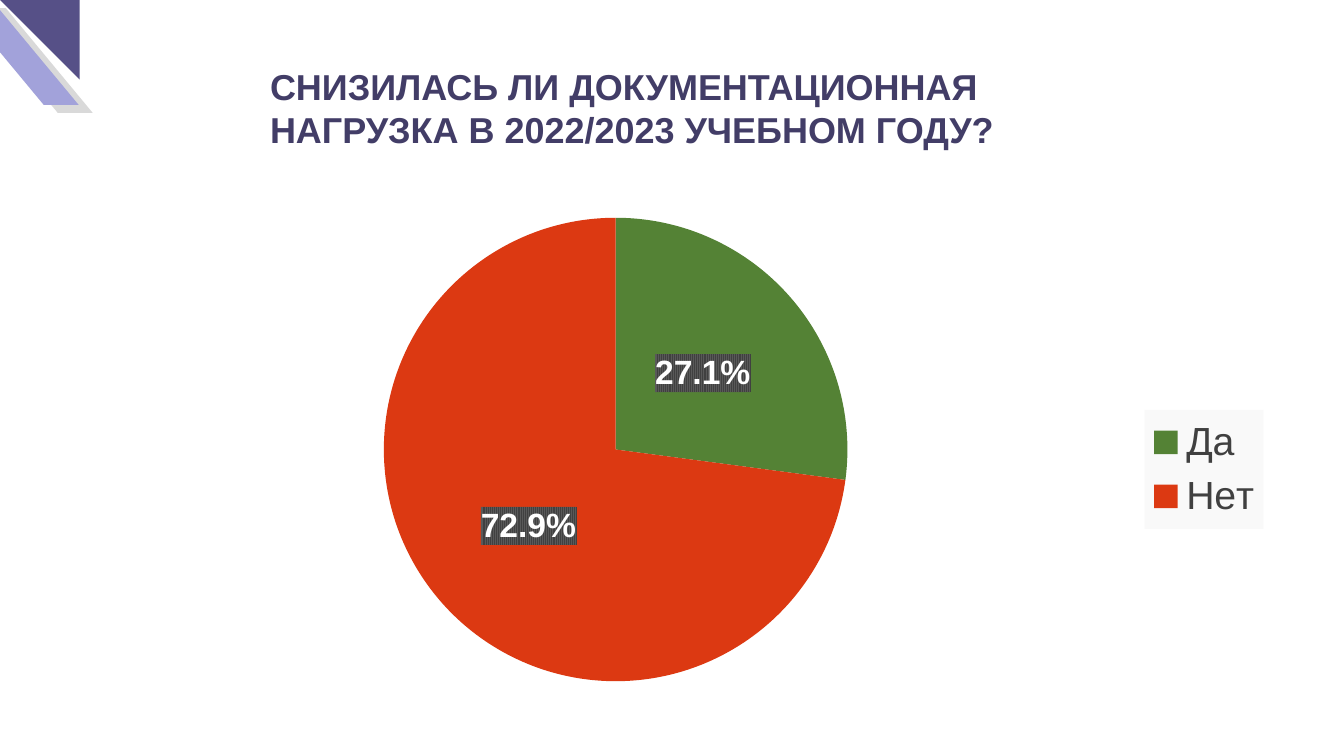
from lxml.etree import SubElement
from pptx import Presentation
from pptx.chart.data import CategoryChartData
from pptx.dml.color import RGBColor
from pptx.enum.chart import XL_CHART_TYPE, XL_LABEL_POSITION, XL_LEGEND_POSITION
from pptx.enum.shapes import MSO_SHAPE
from pptx.oxml import parse_xml
from pptx.oxml.ns import nsdecls, qn
from pptx.util import Inches, Pt

GRAY = RGBColor(0xD9, 0xD9, 0xD9)
LILAC = RGBColor(0xA2, 0xA2, 0xDA)
VIOLET = RGBColor(0x56, 0x50, 0x87)
NAVY = RGBColor(0x42, 0x3D, 0x67)
GREEN = RGBColor(0x54, 0x82, 0x35)
RED = RGBColor(0xDC, 0x39, 0x12)
DARK = RGBColor(0x40, 0x40, 0x40)
SLATE = RGBColor(0x59, 0x59, 0x59)
PALE = RGBColor(0xF9, 0xF9, 0xF9)
WHITE = RGBColor(0xFF, 0xFF, 0xFF)


class Deck:
    face = "Arial"

    def __init__(self, slide):
        self.slide = slide

    def style(self, font, size, color, bold=False):
        font.name = self.face
        font.size = Pt(size)
        font.color.rgb = color
        font.bold = bold

    def shape(self, kind, box, color, slant=None):
        shape = self.slide.shapes.add_shape(kind, *map(Inches, box))
        shape.shadow.inherit = False
        shape.fill.solid()
        shape.fill.fore_color.rgb = color
        shape.line.fill.background()
        if slant:
            shape.adjustments[0] = slant
        return shape

    def band(self, left, top, color):
        shape = self.shape(MSO_SHAPE.PARALLELOGRAM, (left, top, 1.21, 1.04), color, 0.83)
        shape._element.spPr.find(qn("a:xfrm")).set("flipH", "1")

    def title(self, box, text):
        frame = self.slide.shapes.add_textbox(*map(Inches, box)).text_frame
        frame.word_wrap = True
        line = frame.paragraphs[0]
        line.text = text
        self.style(line.font, 25.7, NAVY, True)

    def place(self, owner, index, inner, box):
        for old in owner.findall(qn("c:layout")):
            owner.remove(old)
        layout = parse_xml(f"<c:layout {nsdecls('c')}/>")
        manual = SubElement(layout, qn("c:manualLayout"))
        parts = [("layoutTarget", "inner")] if inner else []
        parts += [("xMode", "edge"), ("yMode", "edge"), *zip("xywh", box)]
        for tag, value in parts:
            SubElement(manual, qn(f"c:{tag}")).set("val", str(value))
        owner.insert(index, layout)

    def back(self, owner, fill):
        props = parse_xml(f"<c:spPr {nsdecls('c', 'a')}>{fill}</c:spPr>")
        owner.find(qn("c:txPr")).addprevious(props)

    def pie(self, box, names, values, colors):
        data = CategoryChartData()
        data.categories = names
        data.add_series("Series 1", values)
        chart = self.slide.shapes.add_chart(
            XL_CHART_TYPE.PIE, *map(Inches, box), data).chart
        chart.has_title = False
        chart.font.name = self.face
        chart.font.size = Pt(10)
        plot = chart.plots[0]
        plot.vary_by_categories = True
        for index, color in enumerate(colors):
            fill = plot.series[0].points[index].format.fill
            fill.solid()
            fill.fore_color.rgb = color
        self.place(chart._chartSpace.chart.plotArea, 0, True, (0.25, 0.03, 0.39, 0.94))
        self.labels(plot.series[0].data_labels)
        self.legend(chart)

    def labels(self, labels):
        labels.show_value = False
        labels.show_percentage = True
        labels.number_format = "0.0%"
        labels.number_format_is_linked = False
        labels.position = XL_LABEL_POSITION.CENTER
        self.style(labels.font, 24, WHITE, True)
        self.back(labels._element,
                  f'<a:pattFill prst="narVert"><a:fgClr><a:srgbClr val="{DARK}"/></a:fgClr>'
                  f'<a:bgClr><a:srgbClr val="{SLATE}"/></a:bgClr></a:pattFill>')

    def legend(self, chart):
        chart.has_legend = True
        legend = chart.legend
        legend.position = XL_LEGEND_POSITION.RIGHT
        legend.include_in_layout = False
        self.style(legend.font, 28, DARK)
        self.place(legend._element, 1, False, (0.89, 0.42, 0.1, 0.24))
        self.back(legend._element,
                  f'<a:solidFill><a:srgbClr val="{PALE}"/></a:solidFill>')


def main():
    show = Presentation()
    show.slide_width, show.slide_height = Inches(13.33), Inches(7.5)
    deck = Deck(show.slides.add_slide(show.slide_layouts[6]))
    deck.band(-0.29, 0.08, GRAY)
    deck.band(-0.43, 0, LILAC)
    corner = deck.shape(MSO_SHAPE.RIGHT_TRIANGLE, (0, 0, 0.79, 0.79), VIOLET)
    corner.rotation = 180
    deck.title((2.58, 0.59, 7.84, 0.96),
               "СНИЗИЛАСЬ ЛИ ДОКУМЕНТАЦИОННАЯ НАГРУЗКА В 2022/2023 УЧЕБНОМ ГОДУ?")
    deck.pie((0.86, 2, 11.79, 4.92), ("Да", "Нет"), (27.1, 72.9), (GREEN, RED))
    show.save("out.pptx")


if __name__ == "__main__":
    main()
